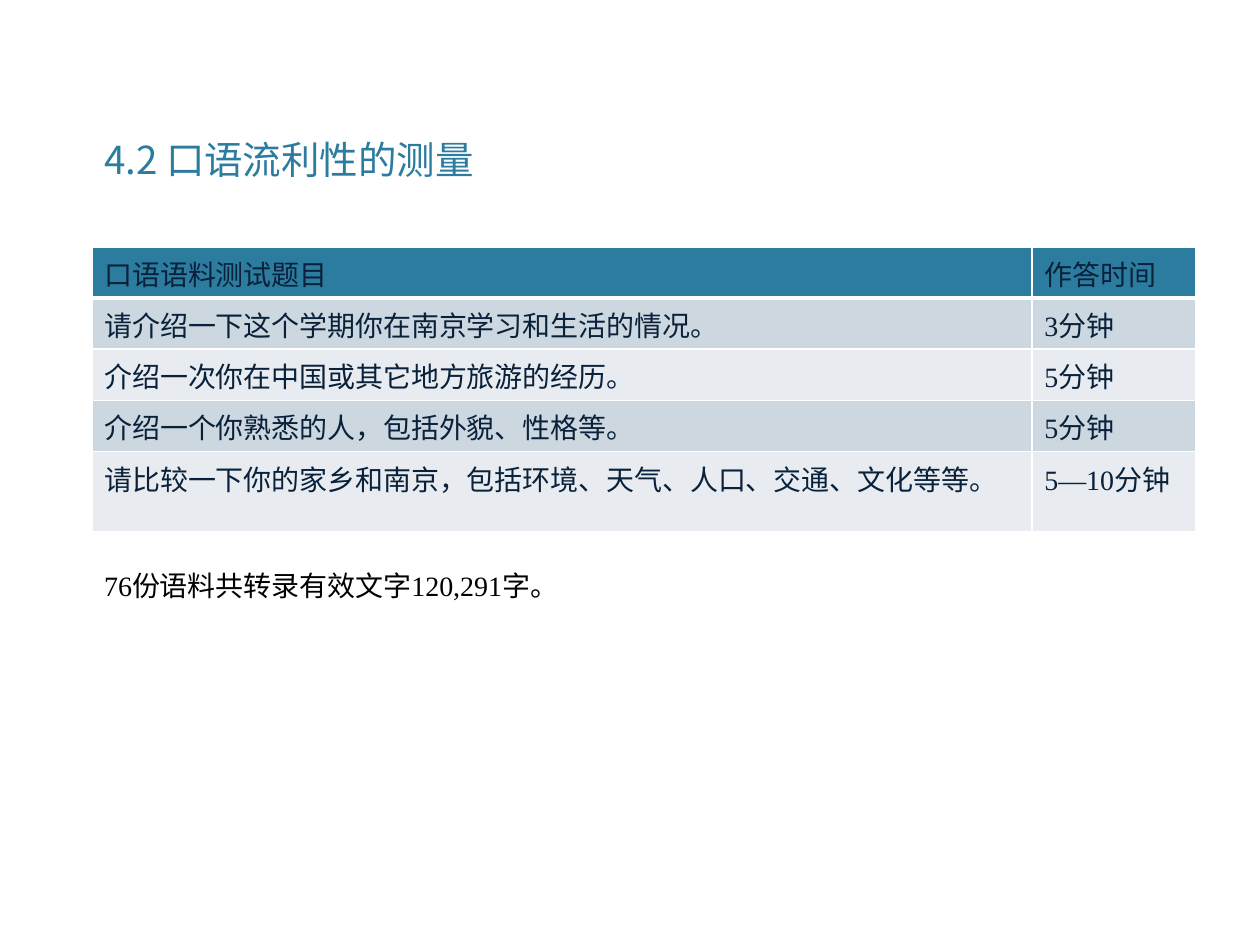
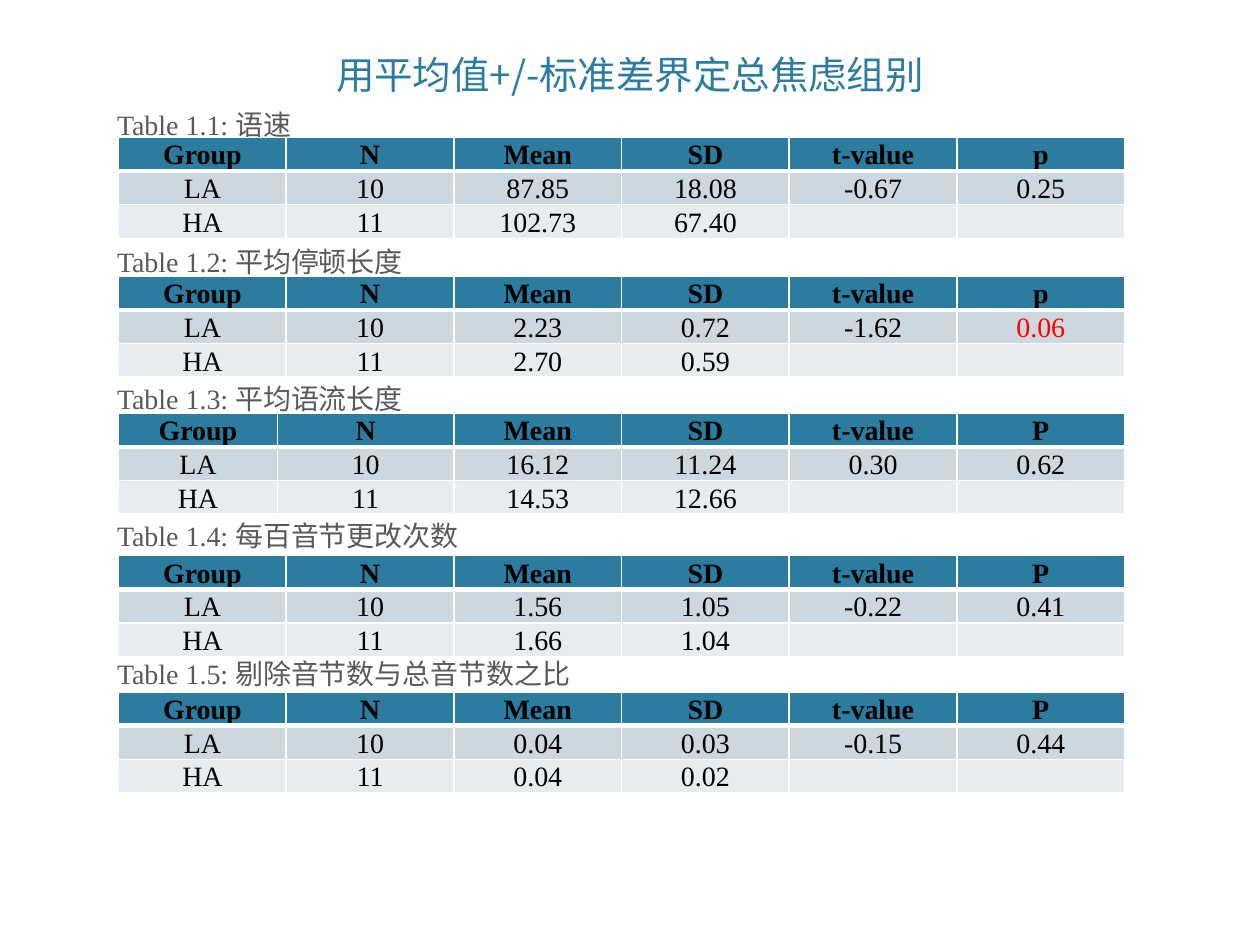
from dataclasses import dataclass

from lxml.etree import SubElement
from pptx import Presentation
from pptx.dml.color import RGBColor
from pptx.enum.text import MSO_ANCHOR, PP_ALIGN
from pptx.oxml.ns import qn
from pptx.util import Cm, Pt


@dataclass(frozen=True)
class Theme:
    accent: str = "2C7C9F"
    band_dark: str = "CDD7DF"
    band_light: str = "E8ECF0"
    border: str = "FFFFFF"
    navy: str = "09213B"
    black: str = "000000"
    gray: str = "595959"
    highlight: str = "FF0000"
    title_size: int = 22
    body_size: int = 16
    sans: str = "Noto Sans CJK SC"
    serif: str = "Times New Roman"


THEME = Theme()


def write_text(paragraph, text, *, size=THEME.body_size, color=THEME.black,
               font=THEME.serif, bold=False, align=PP_ALIGN.LEFT):
    """Write one run; Chinese characters always take the sans face."""
    paragraph.alignment = align
    if not text:
        end_properties = SubElement(paragraph._p, qn("a:endParaRPr"))
        end_properties.set("sz", str(size * 100))
        return
    run = paragraph.add_run()
    run.text = text
    run.font.size = Pt(size)
    run.font.bold = bold
    run.font.name = font
    run.font.color.rgb = RGBColor.from_string(color)
    east_asian = SubElement(run._r.get_or_add_rPr(), qn("a:ea"))
    east_asian.set("typeface", THEME.sans)


def set_cell_borders(cell, top, bottom):
    """Draw the cell's four borders; top and bottom widths are in points."""
    properties = cell._tc.get_or_add_tcPr()
    for side, width in (("L", 1), ("R", 1), ("T", top), ("B", bottom)):
        line = SubElement(properties, qn(f"a:ln{side}"), w=str(Pt(width)))
        fill = SubElement(line, qn("a:solidFill"))
        SubElement(fill, qn("a:srgbClr"), val=THEME.border)


class Deck:
    def __init__(self, theme):
        self.theme = theme
        self.presentation = Presentation()
        self.presentation.slide_width = Cm(25.4)
        self.presentation.slide_height = Cm(19.05)
        self.slide = None

    def add_slide(self):
        self.slide = self.presentation.slides.add_slide(
            self.presentation.slide_layouts[6])

    def add_text(self, left, top, width, height, lines, *, anchor=MSO_ANCHOR.TOP,
                 margin_left=0.25, line_spacing=None, space_after=None, **text_format):
        box = self.slide.shapes.add_textbox(Cm(left), Cm(top), Cm(width), Cm(height))
        frame = box.text_frame
        frame.word_wrap = True
        frame.vertical_anchor = anchor
        frame.margin_left = Cm(margin_left)
        for index, text in enumerate(lines):
            paragraph = frame.add_paragraph() if index else frame.paragraphs[0]
            if line_spacing:
                paragraph.line_spacing = Pt(line_spacing)
            if space_after:
                paragraph.space_after = Pt(space_after)
            write_text(paragraph, text, **text_format)

    def add_title(self, left, top, width, height, text, **box_format):
        self.add_text(left, top, width, height, [text], size=self.theme.title_size,
                      color=self.theme.accent, font=self.theme.sans, **box_format)

    def add_table(self, left, top, column_widths, row_heights, rows, format_cell):
        """Add a banded table; format_cell(cell, row, column) returns the text format."""
        shape = self.slide.shapes.add_table(
            len(rows), len(column_widths), Cm(left), Cm(top),
            Cm(sum(column_widths)), Cm(sum(row_heights)))
        table = shape.table
        table.horz_banding = False
        for column, width in zip(table.columns, column_widths):
            column.width = Cm(width)
        for row, height in zip(table.rows, row_heights):
            row.height = Cm(height)
        bands = (self.theme.band_light, self.theme.band_dark)
        for row, values in enumerate(rows):
            color = bands[row % 2] if row else self.theme.accent
            for column, text in enumerate(values):
                cell = table.cell(row, column)
                set_cell_borders(cell, top=3 if row == 1 else 1, bottom=1 if row else 3)
                cell.fill.solid()
                cell.fill.fore_color.rgb = RGBColor.from_string(color)
                write_text(cell.text_frame.paragraphs[0], text,
                           **format_cell(cell, row, column))


def format_question_cell(cell, row, column):
    is_time = row > 0 and column == 1
    return {"color": THEME.navy, "font": THEME.serif if is_time else THEME.sans}


def format_statistics_cell(cell, row, column):
    cell.vertical_anchor = MSO_ANCHOR.BOTTOM
    cell.margin_left = cell.margin_right = Cm(0.18)
    cell.margin_top = cell.margin_bottom = 0
    return {"bold": row == 0, "align": PP_ALIGN.CENTER}


def format_highlighted_cell(cell, row, column):
    """Format a statistics cell, with the p value in the highlight colour."""
    text_format = format_statistics_cell(cell, row, column)
    if (row, column) == (1, 5):
        text_format["color"] = THEME.highlight
    return text_format


QUESTIONS = [
    ("口语语料测试题目", "作答时间"),
    ("请介绍一下这个学期你在南京学习和生活的情况。", "3分钟"),
    ("介绍一次你在中国或其它地方旅游的经历。", "5分钟"),
    ("介绍一个你熟悉的人，包括外貌、性格等。", "5分钟"),
    ("请比较一下你的家乡和南京，包括环境、天气、人口、交通、文化等等。", "5—10分钟"),
]

EVEN_COLUMNS = [3.38] * 6
SHIFTED_COLUMNS = [3.2, 3.56] + [3.38] * 4

# Measure, table top, column widths, p heading, LA values, HA values, cell format
MEASURES = [
    ("语速", 2.77, EVEN_COLUMNS, "p", ("87.85", "18.08", "-0.67", "0.25"),
     ("102.73", "67.40"), format_statistics_cell),
    ("平均停顿长度", 5.57, EVEN_COLUMNS, "p", ("2.23", "0.72", "-1.62", "0.06"),
     ("2.70", "0.59"), format_highlighted_cell),
    ("平均语流长度", 8.33, SHIFTED_COLUMNS, "P", ("16.12", "11.24", "0.30", "0.62"),
     ("14.53", "12.66"), format_statistics_cell),
    ("每百音节更改次数", 11.2, EVEN_COLUMNS, "P", ("1.56", "1.05", "-0.22", "0.41"),
     ("1.66", "1.04"), format_statistics_cell),
    ("剔除音节数与总音节数之比", 13.95, EVEN_COLUMNS, "P", ("0.04", "0.03", "-0.15", "0.44"),
     ("0.04", "0.02"), format_statistics_cell),
]


def build_measurement_slide(deck):
    deck.add_slide()
    deck.add_title(1.85, 2.62, 17.8, 1.2, "4.2 口语流利性的测量")
    deck.add_text(1.85, 11.33, 19, 0.94, ["76份语料共转录有效文字120,291字。"])
    deck.add_table(1.85, 4.98, [18.95, 3.3], [1.03] * 4 + [1.61],
                   QUESTIONS, format_question_cell)


def build_anxiety_slide(deck):
    deck.add_slide()
    deck.add_title(1.27, -1.09, 22.86, 3.18, "用平均值+/-标准差界定总焦虑组别",
                   anchor=MSO_ANCHOR.BOTTOM, align=PP_ALIGN.CENTER)
    captions = [f"Table 1.{number}: {measure[0]}"
                for number, measure in enumerate(MEASURES, start=1)]
    deck.add_text(1.27, 2.01, 22.86, 15.37, captions, margin_left=1.09,
                  line_spacing=20, space_after=58.4, color=THEME.gray)
    for _, top, columns, p_heading, low, high, format_cell in MEASURES:
        rows = [("Group", "N", "Mean", "SD", "t-value", p_heading),
                ("LA", "10", *low),
                ("HA", "11", *high, "", "")]
        deck.add_table(2.39, top, columns, [0.62] * 3, rows, format_cell)


def main():
    deck = Deck(THEME)
    build_measurement_slide(deck)
    build_anxiety_slide(deck)
    deck.presentation.save("out.pptx")


if __name__ == "__main__":
    main()
